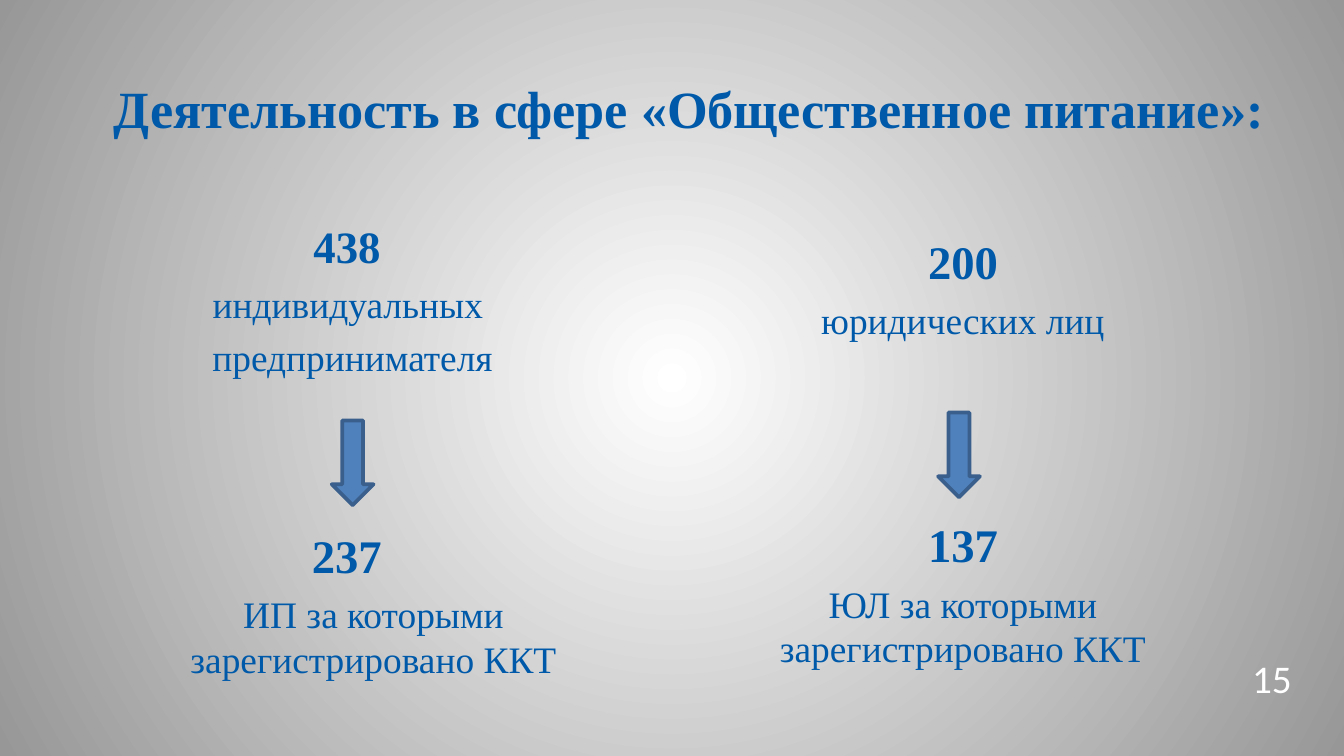
"""Build the slide on cash registers in public catering."""
import pptx
import pptx.util
import pptx.dml.color
import pptx.enum.shapes
import pptx.enum.text
import pptx.oxml
from dataclasses import dataclass

Cm, Pt = pptx.util.Cm, pptx.util.Pt
RGB = pptx.dml.color.RGBColor.from_string
ALIGN = pptx.enum.text.PP_ALIGN
NS = "http://schemas.openxmlformats.org/drawingml/2006/main"


@dataclass
class Theme:
    serif: str = "Times New Roman"
    sans: str = "Calibri"
    blue: str = "005AA9"
    white: str = "FFFFFF"
    edge: str = "979797"
    arrow: str = "4F81BD"
    line: str = "3A5F8C"
    title: int = 28
    label: int = 20
    page: int = 21
    indent: float = 0.79
    gap: float = 0.23


THEME = Theme()
TITLE = "Деятельность в сфере «Общественное питание»:"
PAGE = "15"
COLUMNS = [
    {
        "box": (1.6, 4.01, 10.13, 8.9),
        "arrow": (6.27, 7.95),
        "rows": [
            ("438 ", {"size": 24, "bold": True}),
            ("индивидуальных ", {}),
            ("предпринимателя", {}),
            ("237 ", {"size": 25, "bold": True, "before": 79}),
            ("ИП за которыми зарегистрировано ККТ", {"indent": THEME.indent}),
        ],
    },
    {
        "box": (12.7, 4.27, 10.21, 8.9),
        "arrow": (17.73, 7.8),
        "rows": [
            ("200", {"size": 25, "bold": True, "indent": THEME.indent}),
            ("юридических лиц", {"indent": THEME.indent}),
            ("137", {"size": 25, "bold": True, "indent": THEME.indent, "before": 93.5}),
            ("ЮЛ за которыми зарегистрировано ККТ", {"indent": THEME.indent}),
        ],
    },
]


def add_frame(slide, box, anchor="TOP"):
    """Add a wrapping text box and return its frame."""
    frame = slide.shapes.add_textbox(*map(Cm, box)).text_frame
    frame.word_wrap = True
    frame.vertical_anchor = getattr(pptx.enum.text.MSO_ANCHOR, anchor)
    return frame


def write(frame, text, size=THEME.label, bold=False, color=THEME.blue,
          face=THEME.serif, align=ALIGN.CENTER, before=None, indent=0, pitch=None):
    """Write one paragraph with the given format."""
    first = not frame.text
    para = frame.paragraphs[0] if first else frame.add_paragraph()
    para.alignment = align
    if indent:
        para._p.get_or_add_pPr().set("marL", str(Cm(indent)))
    if not first:
        para.space_before = Pt(size * THEME.gap if before is None else before)
    if pitch:
        para.line_spacing = Pt(pitch)
    run = para.add_run()
    run.text = text
    font = run.font
    font.name, font.size, font.bold = face, Pt(size), bold
    font.color.rgb = RGB(color)


def paint(slide):
    """Fill the background with a round gradient."""
    fill = slide.background.fill
    fill.gradient()
    for stop, color, place in zip(fill.gradient_stops, (THEME.white, THEME.edge), (0, 1)):
        stop.color.rgb = RGB(color)
        stop.position = place
    lin = slide.element.find(f".//{{{NS}}}lin")
    lin.getparent().replace(lin, pptx.oxml.parse_xml(
        f'<a:path xmlns:a="{NS}" path="circle">'
        '<a:fillToRect l="50000" t="50000" r="50000" b="50000"/></a:path>'))


def add_arrow(slide, left, top):
    """Add a down arrow between two figures."""
    kind = pptx.enum.shapes.MSO_SHAPE.DOWN_ARROW
    arrow = slide.shapes.add_shape(kind, Cm(left), Cm(top), Cm(0.79), Cm(1.6))
    arrow.shadow.inherit = False
    arrow.fill.solid()
    arrow.fill.fore_color.rgb = RGB(THEME.arrow)
    arrow.line.color.rgb = RGB(THEME.line)
    arrow.line.width = Pt(2)


def main():
    """Build and save the deck."""
    deck = pptx.Presentation()
    deck.slide_width, deck.slide_height = Cm(25.4), Cm(14.29)
    slide = deck.slides.add_slide(deck.slide_layouts[6])
    paint(slide)
    write(add_frame(slide, (1.9, 1.14, 22.43, 1.8), "MIDDLE"), TITLE,
          size=THEME.title, bold=True, align=ALIGN.LEFT)
    for column in COLUMNS:
        frame = add_frame(slide, column["box"])
        for text, style in column["rows"]:
            write(frame, text, **style)
    write(add_frame(slide, (23.34, 12.22, 1.4, 1.42), "MIDDLE"), PAGE,
          size=THEME.page, color=THEME.white, face=THEME.sans, pitch=18.8)
    for column in COLUMNS:
        add_arrow(slide, *column["arrow"])
    deck.save("out.pptx")


if __name__ == "__main__":
    main()
